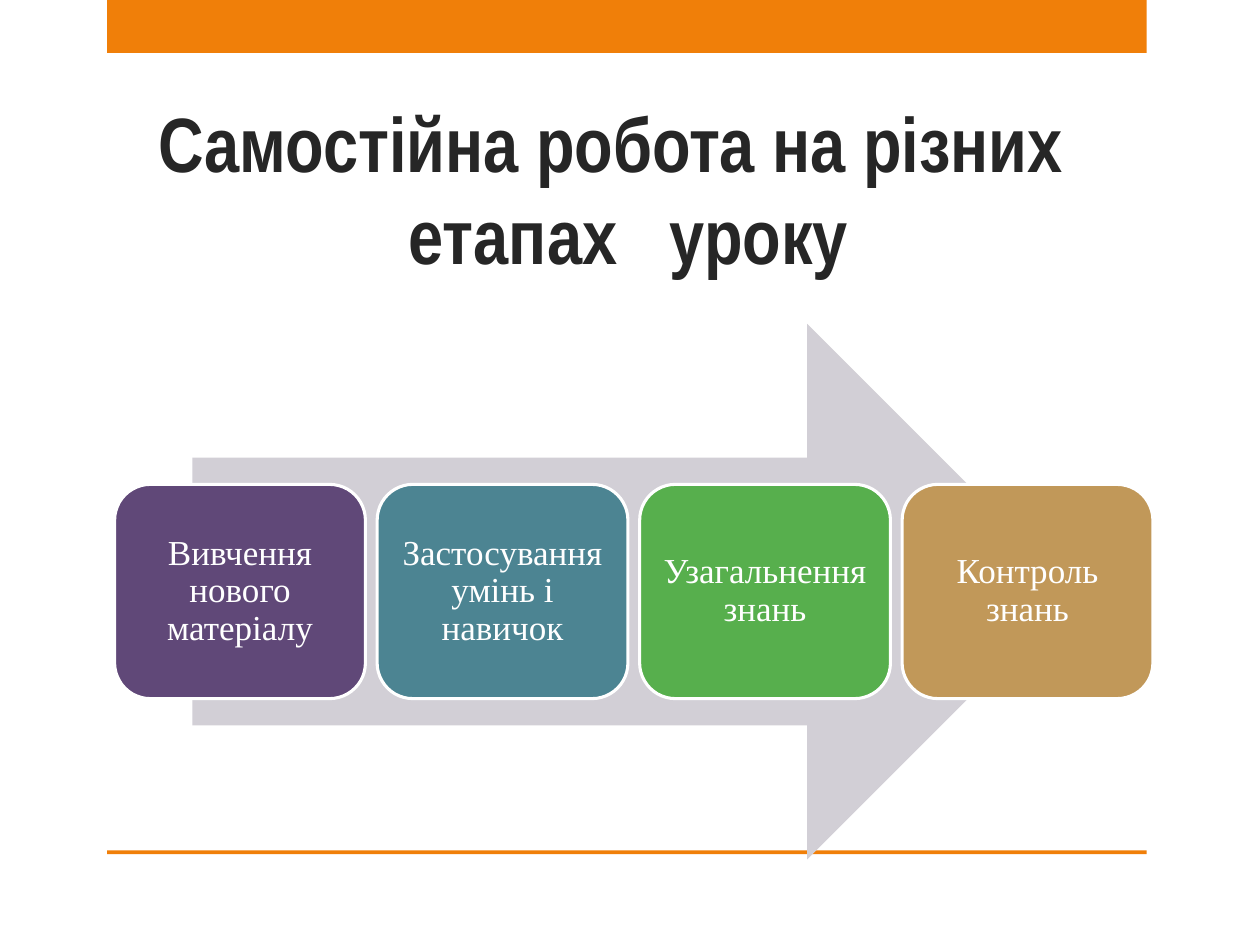
from pptx import Presentation
from pptx.dml.color import RGBColor
from pptx.enum.shapes import MSO_SHAPE as Shape
from pptx.enum.text import MSO_ANCHOR as Anchor, PP_ALIGN as Align
from pptx.util import Inches, Pt

ORANGE = RGBColor(0xF0, 0x7F, 0x09)
WHITE = RGBColor(0xFF, 0xFF, 0xFF)
DARK = RGBColor(0x26, 0x26, 0x26)
ARROW_GREY = RGBColor(0xD2, 0xCF, 0xD6)

STAGES = [
    ("Вивчення нового матеріалу", RGBColor(0x60, 0x48, 0x78)),
    ("Застосування умінь і навичок", RGBColor(0x4C, 0x84, 0x92)),
    ("Узагальнення знань", RGBColor(0x57, 0xAF, 0x4D)),
    ("Контроль знань", RGBColor(0xC1, 0x98, 0x59)),
]
TITLE_FONT = {"name": "Arial Narrow", "size": Pt(44), "bold": True}
STAGE_FONT = {"name": "Times New Roman", "size": Pt(20)}
STAGE_PARAGRAPH = {"line_spacing": 0.9, "space_after": Pt(7)}
STAGE_MARGINS = {f"margin_{side}": Inches(0.08)
                 for side in ("left", "top", "right", "bottom")}


def set_format(target, values):
    for name, value in values.items():
        setattr(target, name, value)


def add_block(slide, kind, box, fill):
    """Add a filled preset shape without outline or shadow."""
    block = slide.shapes.add_shape(kind, *map(Inches, box))
    block.shadow.inherit = False
    block.fill.solid()
    block.fill.fore_color.rgb = fill
    block.line.fill.background()
    return block


def write_text(frame, text, anchor, font, color):
    frame.word_wrap = True
    frame.vertical_anchor = anchor
    paragraph = frame.paragraphs[0]
    paragraph.text = text
    paragraph.alignment = Align.CENTER
    set_format(paragraph.font, font)
    paragraph.font.color.rgb = color
    return paragraph


def add_bands(slide, left, width):
    for top, height in ((0, 0.42), (6.75, 0.03)):
        add_block(slide, Shape.RECTANGLE, (left, top, width, height), ORANGE)


def add_title(slide, box):
    title = slide.shapes.add_textbox(*map(Inches, box))
    write_text(title.text_frame, "Самостійна робота на різних   етапах   уроку",
               Anchor.BOTTOM, TITLE_FONT, DARK)


def add_process(slide, box):
    """Place the arrow and, over it, one card per lesson stage."""
    left, top, width, height = box
    arrow_width = width * 0.85
    add_block(slide, Shape.RIGHT_ARROW,
              (left + (width - arrow_width) / 2, top, arrow_width, height),
              ARROW_GREY)

    card_width, card_height = 1.99, height * 0.4
    pitch = (width - card_width) / (len(STAGES) - 1)
    card_top = top + (height - card_height) / 2
    for index, (stage, color) in enumerate(STAGES):
        card = add_block(slide, Shape.ROUNDED_RECTANGLE,
                         (left + index * pitch, card_top, card_width, card_height),
                         color)
        card.line.color.rgb = WHITE
        card.line.width = Pt(1.75)
        set_format(card.text_frame, STAGE_MARGINS)
        paragraph = write_text(card.text_frame, stage, Anchor.MIDDLE,
                               STAGE_FONT, WHITE)
        set_format(paragraph, STAGE_PARAGRAPH)


def main():
    deck = Presentation()
    deck.slide_width, deck.slide_height = Inches(10), Inches(7.5)
    slide = deck.slides.add_slide(deck.slide_layouts[6])
    add_bands(slide, 0.85, 8.25)
    add_title(slide, (1.14, 0.52, 7.42, 1.75))
    add_process(slide, (0.91, 2.57, 8.24, 4.25))
    deck.save("out.pptx")


if __name__ == "__main__":
    main()
